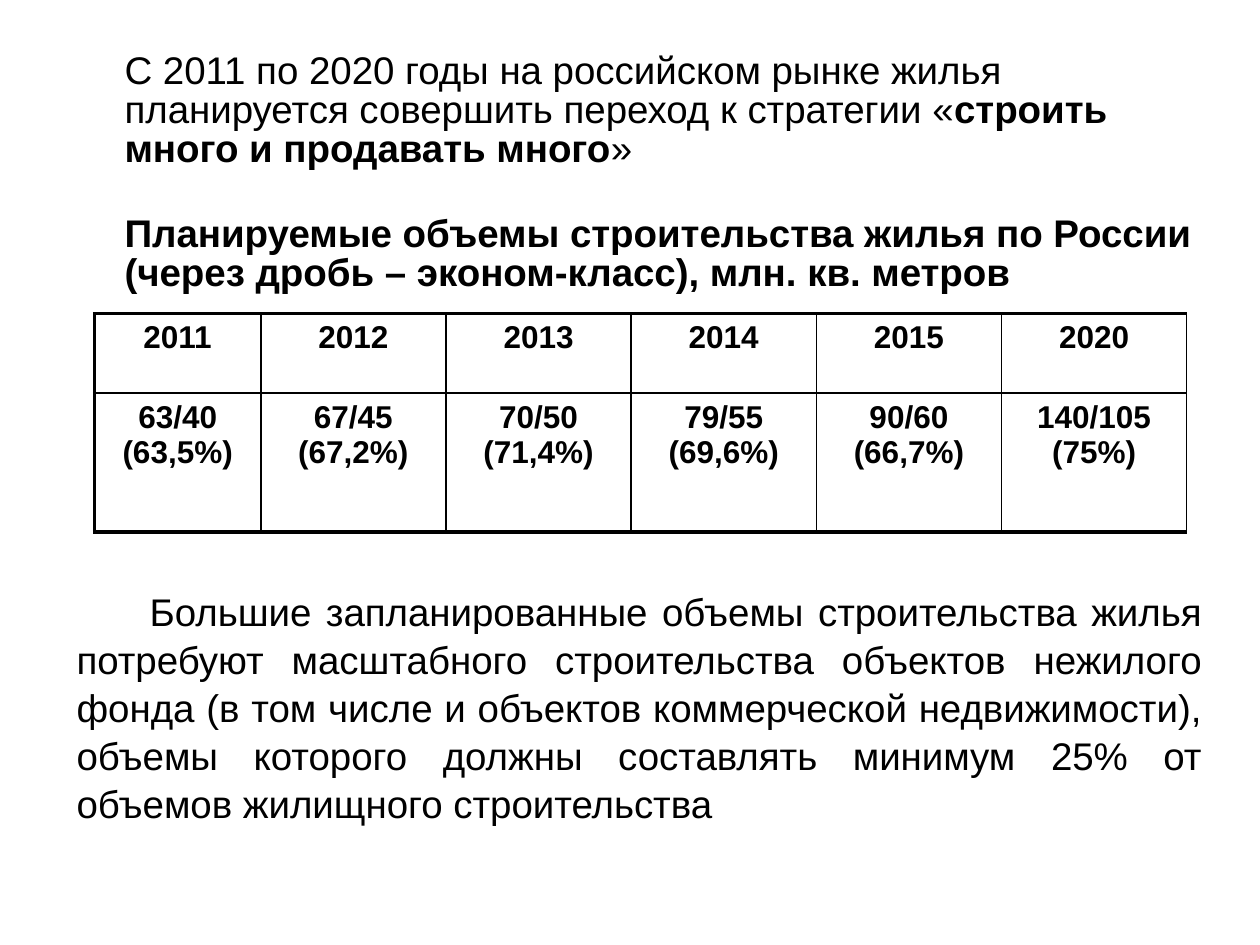
from lxml.etree import SubElement
from pptx import Presentation
from pptx.dml.color import RGBColor
from pptx.enum.text import PP_ALIGN
from pptx.oxml.ns import qn
from pptx.util import Inches, Pt

BLACK = RGBColor(0, 0, 0)
FONT = "Arial"
WIDTH, HEIGHT = Inches(10), Inches(7.5)
THIN, THICK = Pt(1), Pt(2.25)

STRATEGY = [
    ("С 2011 по 2020 годы на российском рынке жилья планируется "
     "совершить переход к стратегии «", False),
    ("строить много и продавать много", True),
    ("»", False),
]
TABLE_TITLE = [
    ("Планируемые объемы строительства жилья по России "
     "(через дробь – эконом-класс), млн. кв. метров", True),
]
CONCLUSION = [
    ("Большие запланированные объемы строительства жилья потребуют "
     "масштабного строительства объектов нежилого фонда (в том числе и "
     "объектов коммерческой недвижимости), объемы которого должны "
     "составлять минимум 25% от объемов жилищного строительства", False),
]
VOLUMES = [
    ("2011", "2012", "2013", "2014", "2015", "2020"),
    ("63/40 (63,5%)", "67/45 (67,2%)", "70/50 (71,4%)",
     "79/55 (69,6%)", "90/60 (66,7%)", "140/105 (75%)"),
]


def across(share):
    return int(WIDTH * share)


def down(share):
    return int(HEIGHT * share)


def style_run(run, size, bold):
    run.font.name = FONT
    run.font.size = Pt(size)
    run.font.bold = bold
    run.font.color.rgb = BLACK


def add_text(slide, left, top, height, parts, line_spacing):
    """Add a paragraph of (text, bold) parts reaching the right margin."""
    frame = slide.shapes.add_textbox(
        across(left), down(top), across(0.964 - left), down(height)).text_frame
    frame.word_wrap = True
    paragraph = frame.paragraphs[0]
    paragraph.line_spacing = line_spacing
    for text, bold in parts:
        run = paragraph.add_run()
        run.text = text
        style_run(run, 22, bold)
    return paragraph


def set_borders(cell, **widths):
    properties = cell._tc.get_or_add_tcPr()
    for position, side in enumerate("LRTB"):
        line = properties.makeelement(qn(f"a:ln{side}"), w=str(int(widths[side])))
        fill = SubElement(line, qn("a:solidFill"))
        SubElement(fill, qn("a:srgbClr"), val=str(BLACK))
        properties.insert(position, line)


def add_volumes(slide):
    rows, columns = len(VOLUMES), len(VOLUMES[0])
    table = slide.shapes.add_table(
        rows, columns, across(0.075), down(0.332),
        across(0.867), down(0.231)).table
    for index, column in enumerate(table.columns):
        column.width = across(0.147 if index else 0.132)
    for row, share in zip(table.rows, (0.084, 0.147)):
        row.height = down(share)
    for r, values in enumerate(VOLUMES):
        for c, value in enumerate(values):
            cell = table.cell(r, c)
            cell.text_frame.text = value
            paragraph = cell.text_frame.paragraphs[0]
            paragraph.alignment = PP_ALIGN.CENTER
            style_run(paragraph.runs[0], 18, True)
            cell.fill.background()
            set_borders(cell,
                        L=THIN if c else THICK,
                        R=THIN,
                        T=THIN if r else THICK,
                        B=THICK if r == rows - 1 else THIN)


def main():
    presentation = Presentation()
    presentation.slide_width, presentation.slide_height = WIDTH, HEIGHT
    slide = presentation.slides.add_slide(presentation.slide_layouts[6])

    add_text(slide, 0.089, 0.05, 0.13, STRATEGY, 0.84)
    add_text(slide, 0.089, 0.223, 0.09, TABLE_TITLE, 0.84)
    add_volumes(slide)
    conclusion = add_text(slide, 0.051, 0.614, 0.26, CONCLUSION, 1.04)
    conclusion.alignment = PP_ALIGN.JUSTIFY
    conclusion._p.get_or_add_pPr().set("indent", str(across(0.058)))

    presentation.save("out.pptx")


if __name__ == "__main__":
    main()
